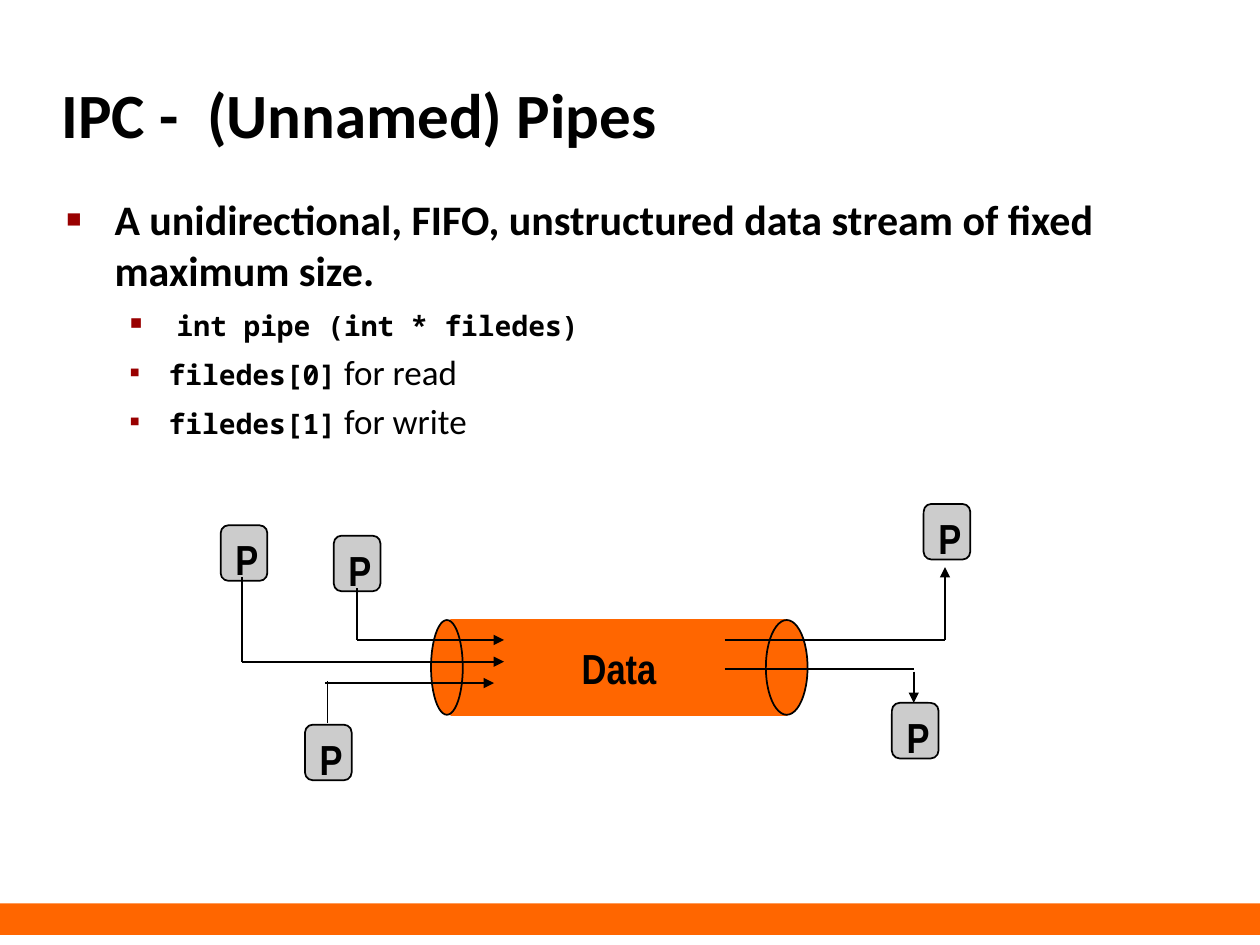
from lxml import etree
from pptx import Presentation
from pptx.dml.color import RGBColor
from pptx.enum.shapes import MSO_CONNECTOR, MSO_SHAPE
from pptx.enum.text import MSO_ANCHOR, PP_ALIGN
from pptx.oxml.ns import qn
from pptx.util import Cm, Pt

RECTANGLE = MSO_SHAPE.RECTANGLE
ROUNDED = MSO_SHAPE.ROUNDED_RECTANGLE
OVAL = MSO_SHAPE.OVAL
STRAIGHT = MSO_CONNECTOR.STRAIGHT
TOP, MIDDLE = MSO_ANCHOR.TOP, MSO_ANCHOR.MIDDLE
LEFT, CENTER = PP_ALIGN.LEFT, PP_ALIGN.CENTER

COLORS = {"orange": "FF6600", "black": "000000", "grey": "CCCCCC", "bullet": "990000"}
BODY, CODE, LABEL = "Calibri", "Noto Sans Mono", "Arial Narrow"

PIPE_TOP, PIPE_HEIGHT = 12.5, 1.91
PROCESSES = [(18.62, 10.16), (4.45, 10.59), (17.98, 14.17), (6.73, 10.8), (6.15, 14.61)]
ARROWS = [
    (7.19, 12.9, 10.16, 12.9),
    (4.88, 13.34, 10.16, 13.34),
    (6.55, 13.77, 9.96, 13.77),
    (19.05, 12.9, 19.05, 11.43),
    (18.42, 13.54, 18.42, 14.17),
]
LINES = [
    (4.88, 11.63, 4.88, 13.34),
    (7.19, 11.86, 7.19, 12.9),
    (6.6, 14.58, 6.6, 13.72),
    (14.61, 12.9, 19.05, 12.9),
    (14.61, 13.49, 18.42, 13.49),
]


def color(name):
    return RGBColor.from_string(COLORS[name])


def add_span(para, text, font=BODY, size=24, bold=True):
    span = para.add_run()
    span.text = text
    span.font.name = font
    span.font.size = Pt(size)
    span.font.bold = bold
    span.font.color.rgb = color("black")


def add_shape(page, kind, left, top, width, height, fill, line=None):
    shape = page.shapes.add_shape(kind, Cm(left), Cm(top), Cm(width), Cm(height))
    shape.shadow.inherit = False
    shape.fill.solid()
    shape.fill.fore_color.rgb = color(fill)
    if line:
        shape.line.color.rgb = color(line)
        shape.line.width = Pt(1)
    else:
        shape.line.fill.background()
    return shape


def set_label(shape, text, anchor=TOP, align=LEFT):
    frame = shape.text_frame
    frame.word_wrap = False
    frame.vertical_anchor = anchor
    para = frame.paragraphs[0]
    para.alignment = align
    add_span(para, text, font=LABEL)


def add_text_box(page, left, top, width, height, anchor=TOP):
    box = page.shapes.add_textbox(Cm(left), Cm(top), Cm(width), Cm(height))
    frame = box.text_frame
    frame.word_wrap = True
    frame.vertical_anchor = anchor
    return frame


def set_bullet(para, mark, percent, margin, hanging):
    props = para._p.get_or_add_pPr()
    props.set("marL", str(Cm(margin)))
    props.set("indent", str(-Cm(hanging)))
    tint = etree.SubElement(props, qn("a:buClr"))
    etree.SubElement(tint, qn("a:srgbClr"), val=COLORS["bullet"])
    etree.SubElement(props, qn("a:buSzPct"), val=str(percent * 1000))
    etree.SubElement(props, qn("a:buFont"), typeface="Arial")
    etree.SubElement(props, qn("a:buChar"), char=mark)


def add_line(page, x1, y1, x2, y2, arrow=False):
    line = page.shapes.add_connector(STRAIGHT, Cm(x1), Cm(y1), Cm(x2), Cm(y2))
    line.line.color.rgb = color("black")
    line.line.width = Pt(1)
    if arrow:
        etree.SubElement(line.line._get_or_add_ln(), qn("a:tailEnd"), type="triangle")
    etree.SubElement(line._element.spPr, qn("a:effectLst"))


def add_body(page):
    frame = add_text_box(page, 1.09, 3.78, 21.95, 6.58)
    para = frame.paragraphs[0]
    para.space_before = Pt(4.8)
    set_bullet(para, "■", 60, 0.97, 0.97)
    add_span(para, "A unidirectional, FIFO, unstructured data stream of fixed maximum size.")
    items = [
        [(" ", BODY), ("int pipe (int * filedes)", CODE)],
        [("filedes[0]", CODE), (" for read", BODY)],
        [("filedes[1]", CODE), (" for write", BODY)],
    ]
    for item in items:
        para = frame.add_paragraph()
        para.level = 1
        para.space_before = Pt(4)
        set_bullet(para, "▪", 110, 2.06, 0.79)
        for text, font in item:
            code = font == CODE
            add_span(para, text, font=font, size=16 if code else 20, bold=code)


def add_diagram(page):
    pipe = add_shape(page, RECTANGLE, 9.09, PIPE_TOP, 6.78, PIPE_HEIGHT, "orange", "orange")
    set_label(pipe, "Data", anchor=MIDDLE, align=CENTER)
    for left, width in [(15.44, 0.84), (8.69, 0.64)]:
        add_shape(page, OVAL, left, PIPE_TOP, width, PIPE_HEIGHT, "orange", "black")
    for left, top in PROCESSES:
        process = add_shape(page, ROUNDED, left, top, 0.94, 1.12, "grey", "black")
        set_label(process, "P")
    for ends in ARROWS:
        add_line(page, *ends, arrow=True)
    for ends in LINES:
        add_line(page, *ends)


def main():
    deck = Presentation()
    deck.slide_width, deck.slide_height = Cm(25.4), Cm(19.05)
    page = deck.slides.add_slide(deck.slide_layouts[6])
    add_shape(page, RECTANGLE, 0, 18.21, 25.4, 0.64, "orange")
    title = add_text_box(page, 0.99, 1.22, 21.08, 2.11, anchor=MIDDLE)
    add_span(title.paragraphs[0], "IPC -  (Unnamed) Pipes", size=36)
    add_body(page)
    add_diagram(page)
    deck.save("out.pptx")


if __name__ == "__main__":
    main()
